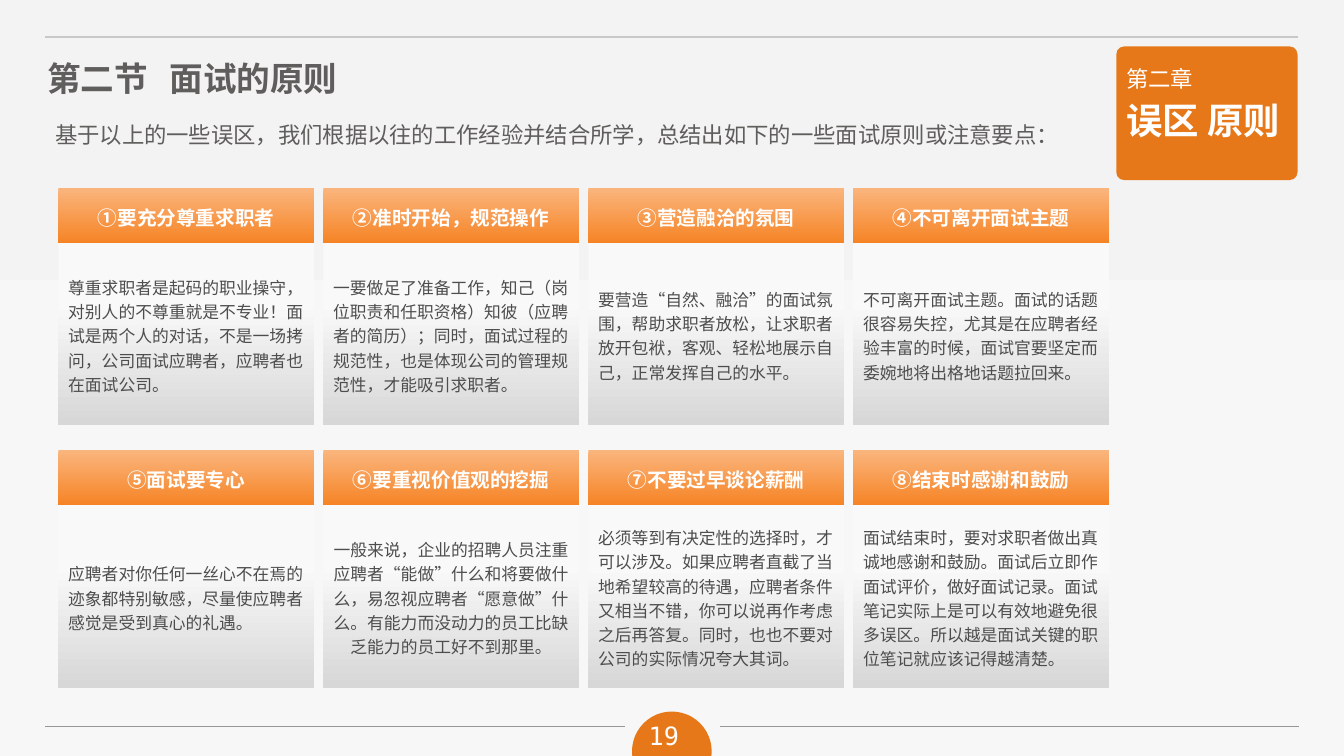
"""Build the slide on interview principles with eight numbered cards."""
from dataclasses import dataclass

import lxml.etree
import pptx
import pptx.dml.color
import pptx.enum.shapes
import pptx.enum.text
import pptx.oxml.ns
import pptx.util
from pptx.util import Cm

RGBColor = pptx.dml.color.RGBColor
Align = pptx.enum.text.PP_ALIGN
Anchor = pptx.enum.text.MSO_ANCHOR
ShapeType = pptx.enum.shapes.MSO_SHAPE

ORANGE = RGBColor(0xE6, 0x78, 0x19)
HEADER_TOP = RGBColor(0xFA, 0xB5, 0x7D)
HEADER_BOTTOM = RGBColor(0xF6, 0x84, 0x26)
BODY_TOP = RGBColor(0xF9, 0xF9, 0xF9)
BODY_BOTTOM = RGBColor(0xD7, 0xD7, 0xD7)
PAGE_TOP = RGBColor(0xF3, 0xF3, 0xF3)
PAGE_BOTTOM = RGBColor(0xF7, 0xF7, 0xF7)
TOP_RULE = RGBColor(0xC8, 0xC8, 0xC8)
FOOTER_RULE = RGBColor(0x96, 0x96, 0x96)
HEADING_GREY = RGBColor(0x5F, 0x5E, 0x5C)
TEXT_GREY = RGBColor(0x4D, 0x4D, 0x4D)
WHITE = RGBColor(0xFF, 0xFF, 0xFF)

CHINESE_FONT = "Noto Sans CJK SC"
COLUMNS = 4
GRID_LEFT, GRID_TOP = 1.47, 4.74
COLUMN_PITCH, ROW_PITCH = 6.68, 6.61
CARD_WIDTH, HEADER_HEIGHT, BODY_HEIGHT = 6.45, 1.38, 4.6


@dataclass(frozen=True)
class Box:
    left: float
    top: float
    width: float
    height: float

    def lengths(self) -> tuple:
        return Cm(self.left), Cm(self.top), Cm(self.width), Cm(self.height)


@dataclass(frozen=True)
class TextStyle:
    size: float
    color: RGBColor
    bold: bool = False
    align: Align = Align.LEFT
    line_spacing: float = 1.0
    space_before: float = 0
    font: str = CHINESE_FONT


@dataclass(frozen=True)
class Gradient:
    top: RGBColor
    bottom: RGBColor
    start: float = 0
    end: float = 1


@dataclass(frozen=True)
class Card:
    heading: str
    body: str
    body_align: Align = Align.LEFT


@dataclass(frozen=True)
class Rule:
    left: float
    right: float
    height: float
    color: RGBColor
    width: float


PAGE_GRADIENT = Gradient(PAGE_TOP, PAGE_BOTTOM, 0, 0.74)
HEADER_GRADIENT = Gradient(HEADER_TOP, HEADER_BOTTOM)
BODY_GRADIENT = Gradient(BODY_TOP, BODY_BOTTOM, 0.33)

RULES = [
    Rule(1.14, 32.72, 0.93, TOP_RULE, 1.5),
    Rule(1.14, 15.75, 18.31, FOOTER_RULE, 0.75),
    Rule(18.14, 32.74, 18.31, FOOTER_RULE, 0.75),
]

CARDS = [
    Card("①要充分尊重求职者", "尊重求职者是起码的职业操守，对别人的不尊重就是不专业！面试是两个人的对话，不是一场拷问，公司面试应聘者，应聘者也在面试公司。"),
    Card("②准时开始，规范操作", "一要做足了准备工作，知己（岗位职责和任职资格）知彼（应聘者的简历）；同时，面试过程的规范性，也是体现公司的管理规范性，才能吸引求职者。"),
    Card("③营造融洽的氛围", "要营造“自然、融洽”的面试氛围，帮助求职者放松，让求职者放开包袱，客观、轻松地展示自己，正常发挥自己的水平。"),
    Card("④不可离开面试主题", "不可离开面试主题。面试的话题很容易失控，尤其是在应聘者经验丰富的时候，面试官要坚定而委婉地将出格地话题拉回来。"),
    Card("⑤面试要专心", "应聘者对你任何一丝心不在焉的迹象都特别敏感，尽量使应聘者感觉是受到真心的礼遇。"),
    Card("⑥要重视价值观的挖掘", "一般来说，企业的招聘人员注重应聘者“能做”什么和将要做什么，易忽视应聘者“愿意做”什么。有能力而没动力的员工比缺乏能力的员工好不到那里。", Align.CENTER),
    Card("⑦不要过早谈论薪酬", "必须等到有决定性的选择时，才可以涉及。如果应聘者直截了当地希望较高的待遇，应聘者条件又相当不错，你可以说再作考虑之后再答复。同时，也也不要对公司的实际情况夸大其词。"),
    Card("⑧结束时感谢和鼓励", "面试结束时，要对求职者做出真诚地感谢和鼓励。面试后立即作面试评价，做好面试记录。面试笔记实际上是可以有效地避免很多误区。所以越是面试关键的职位笔记就应该记得越清楚。"),
]


def add_child(parent, tag: str, **attributes: str):
    return lxml.etree.SubElement(parent, pptx.oxml.ns.qn(tag), attributes)


def write_paragraph(paragraph, text: str, style: TextStyle) -> None:
    paragraph.text = text
    paragraph.alignment = style.align
    paragraph.line_spacing = style.line_spacing
    paragraph.space_before = pptx.util.Pt(style.space_before)
    font = paragraph.font
    font.size = pptx.util.Pt(style.size)
    font.bold = style.bold
    font.color.rgb = style.color
    font.name = style.font
    add_child(font._element, "a:ea", typeface=CHINESE_FONT)


def fill_gradient(fill, gradient: Gradient) -> None:
    fill.gradient()
    fill.gradient_angle = 270
    first, last = fill.gradient_stops
    first.color.rgb, first.position = gradient.top, gradient.start
    last.color.rgb, last.position = gradient.bottom, gradient.end


def add_plain_shape(slide, kind: ShapeType, box: Box):
    shape = slide.shapes.add_shape(kind, *box.lengths())
    shape.shadow.inherit = False
    shape.line.fill.background()
    shape.fill.solid()
    shape.fill.fore_color.rgb = ORANGE
    return shape


def add_panel(slide, box: Box, gradient: Gradient, text: str, style: TextStyle) -> None:
    panel = add_plain_shape(slide, ShapeType.RECTANGLE, box)
    fill_gradient(panel.fill, gradient)
    panel.text_frame.word_wrap = True
    panel.text_frame.vertical_anchor = Anchor.MIDDLE
    write_paragraph(panel.text_frame.paragraphs[0], text, style)


def add_card(slide, index: int, card: Card) -> None:
    row, column = divmod(index, COLUMNS)
    left = GRID_LEFT + column * COLUMN_PITCH
    top = GRID_TOP + row * ROW_PITCH
    add_panel(slide, Box(left, top, CARD_WIDTH, HEADER_HEIGHT), HEADER_GRADIENT,
              card.heading, TextStyle(14, WHITE, True, Align.CENTER, 1.2))
    add_panel(slide, Box(left, top + HEADER_HEIGHT, CARD_WIDTH, BODY_HEIGHT), BODY_GRADIENT,
              card.body, TextStyle(12, TEXT_GREY, False, card.body_align, 1.2))


def add_text(slide, box: Box, *lines: tuple[str, TextStyle]) -> None:
    frame = slide.shapes.add_textbox(*box.lengths()).text_frame
    frame.word_wrap = True
    for index, (text, style) in enumerate(lines):
        paragraph = frame.add_paragraph() if index else frame.paragraphs[0]
        write_paragraph(paragraph, text, style)


def add_rule(slide, rule: Rule) -> None:
    connector = slide.shapes.add_connector(
        pptx.enum.shapes.MSO_CONNECTOR.STRAIGHT,
        Cm(rule.left), Cm(rule.height), Cm(rule.right), Cm(rule.height))
    connector.line.color.rgb = rule.color
    connector.line.width = pptx.util.Pt(rule.width)
    add_child(connector._element.spPr, "a:effectLst")


def format_title(title) -> None:
    title.left, title.top, title.width, title.height = Box(0.94, 1.32, 13.79, 1.27).lengths()
    frame = title.text_frame
    frame.auto_size = pptx.enum.text.MSO_AUTO_SIZE.NONE
    frame.vertical_anchor = Anchor.TOP
    paragraph = frame.paragraphs[0]
    write_paragraph(paragraph, "第二节\t面试的原则",
                    TextStyle(24, HEADING_GREY, True, font="Arial Narrow"))
    tab_list = pptx.oxml.ns.qn("a:tabLst")
    tabs = lxml.etree.Element(tab_list)
    add_child(tabs, "a:tab", pos=str(Cm(3.08)), algn="l")
    paragraph.font._element.addprevious(tabs)


def main() -> None:
    presentation = pptx.Presentation()
    presentation.slide_width, presentation.slide_height = Cm(33.88), Cm(19.05)
    slide = presentation.slides.add_slide(presentation.slide_layouts[5])
    fill_gradient(slide.background.fill, PAGE_GRADIENT)
    format_title(slide.shapes.title)

    badge = add_plain_shape(slide, ShapeType.ROUNDED_RECTANGLE, Box(28.14, 1.17, 4.57, 3.37))
    badge.adjustments[0] = 0.06
    add_text(slide, Box(28.14, 1.52, 4.52, 2.18),
             ("第二章", TextStyle(16, WHITE, space_before=4)),
             ("误区 原则", TextStyle(26, WHITE, True, space_before=4)))

    page_tab = add_plain_shape(slide, ShapeType.CHORD, Box(15.93, 17.93, 2.01, 2.01))
    page_tab.adjustments[0], page_tab.adjustments[1] = 35.77, 153.29
    page_tab.rotation = 112.4
    add_text(slide, Box(15.63, 18.03, 2.21, 1.02),
             ("19", TextStyle(18, WHITE, align=Align.CENTER, font="DejaVu Sans Mono")))

    add_text(slide, Box(1.14, 2.72, 27.25, 1.14),
             ("基于以上的一些误区，我们根据以往的工作经验并结合所学，总结出如下的一些面试原则或注意要点：",
              TextStyle(16, HEADING_GREY, line_spacing=1.3)))
    for rule in RULES:
        add_rule(slide, rule)
    for index, card in enumerate(CARDS):
        add_card(slide, index, card)
    presentation.save("out.pptx")


if __name__ == "__main__":
    main()
